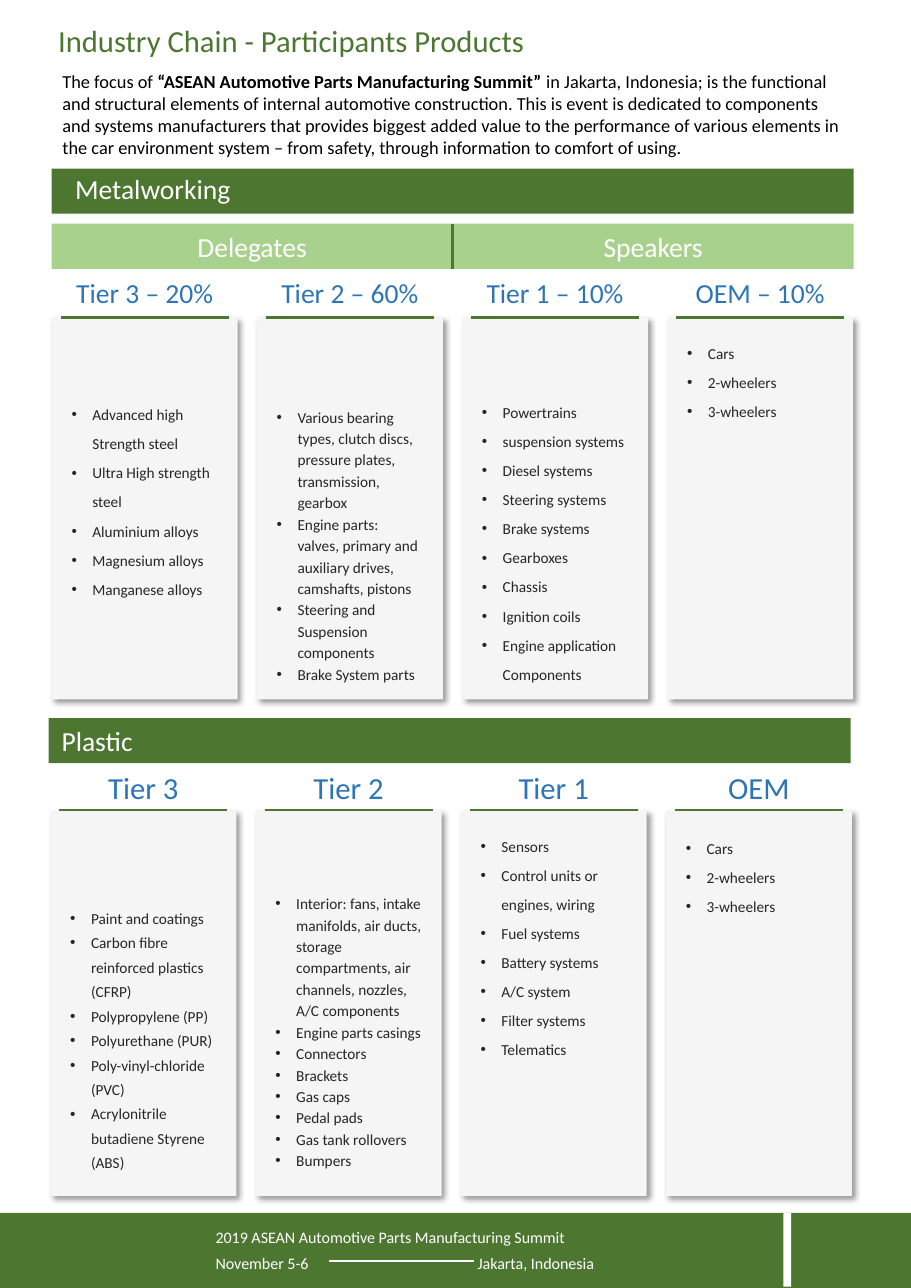
from dataclasses import dataclass

from lxml.etree import SubElement
from pptx import Presentation
from pptx.dml.color import RGBColor
from pptx.enum.shapes import MSO_CONNECTOR, MSO_SHAPE
from pptx.enum.text import MSO_ANCHOR, PP_ALIGN
from pptx.oxml.ns import qn
from pptx.util import Cm, Pt

GREEN = RGBColor(0x4D, 0x77, 0x31)
LIGHT_GREEN = RGBColor(0xA9, 0xD1, 0x8E)
BLUE = RGBColor(0x2E, 0x75, 0xB6)
CARD_GREY = RGBColor(0xF5, 0xF5, 0xF5)
DARK_GREY = RGBColor(0x26, 0x26, 0x26)
BLACK = RGBColor(0, 0, 0)
WHITE = RGBColor(0xFF, 0xFF, 0xFF)

COLUMN_STEP = 4.73
CARD_WIDTH = 4.29
CARD_MARGIN = 0.21
BAR_WIDTH = 18.49
BAR_HEIGHT = 1.04


@dataclass
class Tier:
    """One column; bottom is where its list ends, spacing its line pitch in points."""
    heading: str
    bottom: float
    spacing: int
    products: list


VEHICLES = ["Cars", "2-wheelers", "3-wheelers"]

METAL_TIERS = [
    Tier("Tier 3 – 20%", 13.92, 19, [
        "Advanced high Strength steel", "Ultra High strength steel",
        "Aluminium alloys", "Magnesium alloys", "Manganese alloys"]),
    Tier("Tier 2 – 60%", 15.88, 14, [
        "Various bearing types, clutch discs, pressure plates, transmission, gearbox",
        "Engine parts: valves, primary and auxiliary drives, camshafts, pistons",
        "Steering and Suspension components", "Brake System parts"]),
    Tier("Tier 1 – 10%", 15.88, 19, [
        "Powertrains", "suspension systems", "Diesel systems", "Steering systems",
        "Brake systems", "Gearboxes", "Chassis", "Ignition coils",
        "Engine application Components"]),
    Tier("OEM – 10%", 9.83, 19, VEHICLES),
]

PLASTIC_TIERS = [
    Tier("Tier 3", 27.15, 16, [
        "Paint and coatings", "Carbon fibre reinforced plastics (CFRP)",
        "Polypropylene (PP)", "Polyurethane (PUR)", "Poly-vinyl-chloride (PVC)",
        "Acrylonitrile butadiene Styrene (ABS)"]),
    Tier("Tier 2", 27.1, 14, [
        "Interior: fans, intake manifolds, air ducts, storage compartments, "
        "air channels, nozzles, A/C components",
        "Engine parts casings", "Connectors", "Brackets", "Gas caps", "Pedal pads",
        "Gas tank rollovers", "Bumpers"]),
    Tier("Tier 1", 24.54, 19, [
        "Sensors", "Control units or engines, wiring", "Fuel systems",
        "Battery systems", "A/C system", "Filter systems", "Telematics"]),
    Tier("OEM", 21.23, 19, VEHICLES),
]


def add_run(paragraph, text, size, color, bold=False):
    run = paragraph.add_run()
    run.text = text
    run.font.name = "Calibri"
    run.font.size = Pt(size)
    run.font.bold = bold
    run.font.color.rgb = color


def add_block(slide, left, top, width, height, fill):
    block = slide.shapes.add_shape(
        MSO_SHAPE.RECTANGLE, Cm(left), Cm(top), Cm(width), Cm(height))
    block.shadow.inherit = False
    block.fill.solid()
    block.fill.fore_color.rgb = fill
    block.line.fill.background()
    return block


def add_frame(slide, left, top, width, height):
    """Add an empty wrapping text box and return its text frame."""
    frame = slide.shapes.add_textbox(
        Cm(left), Cm(top), Cm(width), Cm(height)).text_frame
    frame.word_wrap = True
    return frame


def add_label(slide, left, top, width, height, text, size, color,
              align=PP_ALIGN.LEFT):
    paragraph = add_frame(slide, left, top, width, height).paragraphs[0]
    paragraph.alignment = align
    add_run(paragraph, text, size, color)
    return paragraph


def add_rule(slide, x1, y1, x2, y2, color):
    rule = slide.shapes.add_connector(
        MSO_CONNECTOR.STRAIGHT, Cm(x1), Cm(y1), Cm(x2), Cm(y2))
    rule.line.color.rgb = color
    rule.line.width = Pt(1.5)
    SubElement(rule._element.spPr, qn("a:effectLst"))


def add_drop_shadow(block):
    effects = block._element.spPr.find(qn("a:effectLst"))
    shadow = SubElement(effects, qn("a:outerShdw"), blurRad=str(Pt(4)),
                        dist=str(Pt(3)), dir="2700000", algn="tl",
                        rotWithShape="0")
    color = SubElement(shadow, qn("a:srgbClr"), val="000000")
    SubElement(color, qn("a:alpha"), val="40000")


def add_bullets(frame, items, spacing):
    for index, item in enumerate(items):
        paragraph = frame.add_paragraph() if index else frame.paragraphs[0]
        properties = paragraph._p.get_or_add_pPr()
        properties.set("marL", str(Cm(0.48)))
        properties.set("indent", str(-Cm(0.48)))
        SubElement(properties, qn("a:buFont"), typeface="Arial")
        SubElement(properties, qn("a:buChar"), char="•")
        paragraph.line_spacing = Pt(spacing)
        add_run(paragraph, item, 10, DARK_GREY)


def add_tiers(slide, tiers, left, heading_top, heading_size, card_top, card_height):
    for index, tier in enumerate(tiers):
        x = left + index * COLUMN_STEP
        inner_left = x + CARD_MARGIN
        inner_width = CARD_WIDTH - 2 * CARD_MARGIN
        add_drop_shadow(add_block(
            slide, x, card_top, CARD_WIDTH, card_height, CARD_GREY))
        products = add_frame(
            slide, inner_left, card_top, inner_width, tier.bottom - card_top)
        products.vertical_anchor = MSO_ANCHOR.BOTTOM
        add_bullets(products, tier.products, tier.spacing)
        add_label(slide, x, heading_top, CARD_WIDTH, 1.03, tier.heading,
                  heading_size, BLUE, PP_ALIGN.CENTER)
        add_rule(slide, inner_left, card_top, inner_left + inner_width, card_top, GREEN)


def add_audiences(slide):
    half = BAR_WIDTH / 2
    for index, audience in enumerate(["Delegates", "Speakers"]):
        band = add_block(
            slide, 1.19 + index * half, 5.16, half, BAR_HEIGHT, LIGHT_GREEN)
        band.text_frame.vertical_anchor = MSO_ANCHOR.MIDDLE
        paragraph = band.text_frame.paragraphs[0]
        paragraph.alignment = PP_ALIGN.CENTER
        add_run(paragraph, audience, 18, WHITE)
    add_rule(slide, 1.19 + half, 5.16, 1.19 + half, 5.16 + BAR_HEIGHT, GREEN)


def add_intro(slide):
    intro = add_frame(slide, 1.19, 1.5, BAR_WIDTH, 2.31).paragraphs[0]
    add_run(intro, "The focus of ", 12, BLACK)
    add_run(intro, "“ASEAN Automotive Parts Manufacturing Summit” ", 12, BLACK, True)
    add_run(intro, "in Jakarta, Indonesia; is the functional and structural elements "
            "of internal automotive construction. This is event is dedicated to "
            "components and systems manufacturers that provides biggest added value "
            "to the performance of various elements in the car environment system – "
            "from safety, through information to comfort of using.", 12, BLACK)


def add_footer(slide):
    add_block(slide, 0, 27.97, 21, 1.73, GREEN)
    add_block(slide, 18.06, 27.97, 0.18, 1.7, WHITE)
    add_label(slide, 4.72, 28.17, 15.75, 0.74,
              "2019 ASEAN Automotive Parts Manufacturing Summit", 10.5, WHITE)
    venue = add_label(slide, 4.72, 28.78, 15.75, 0.74,
                      "November 5-6\tJakarta, Indonesia", 10.5, WHITE)
    tabs = SubElement(venue._p.get_or_add_pPr(), qn("a:tabLst"))
    SubElement(tabs, qn("a:tab"), pos=str(Cm(6.04)), algn="l")
    add_rule(slide, 7.59, 29.08, 10.92, 29.08, WHITE)


def main():
    presentation = Presentation()
    presentation.slide_width = Cm(21)
    presentation.slide_height = Cm(29.7)
    slide = presentation.slides.add_slide(presentation.slide_layouts[6])

    add_footer(slide)
    add_label(slide, 1.09, 0.38, 18.59, 1.12,
              "Industry Chain - Participants Products", 20, GREEN)
    add_intro(slide)

    add_block(slide, 1.19, 3.89, BAR_WIDTH, BAR_HEIGHT, GREEN)
    add_label(slide, 1.12, 3.84, 4.8, 1.03, "Metalworking", 18, WHITE,
              PP_ALIGN.CENTER)
    add_audiences(slide)
    add_tiers(slide, METAL_TIERS, 1.19, 6.25, 18, 7.32, 8.81)

    add_block(slide, 1.12, 16.56, BAR_WIDTH, BAR_HEIGHT, GREEN)
    add_label(slide, 1.17, 16.56, 4.5, 1.03, "Plastic", 18, WHITE)
    add_tiers(slide, PLASTIC_TIERS, 1.16, 17.6, 20, 18.68, 8.9)

    presentation.save("out.pptx")


if __name__ == "__main__":
    main()
